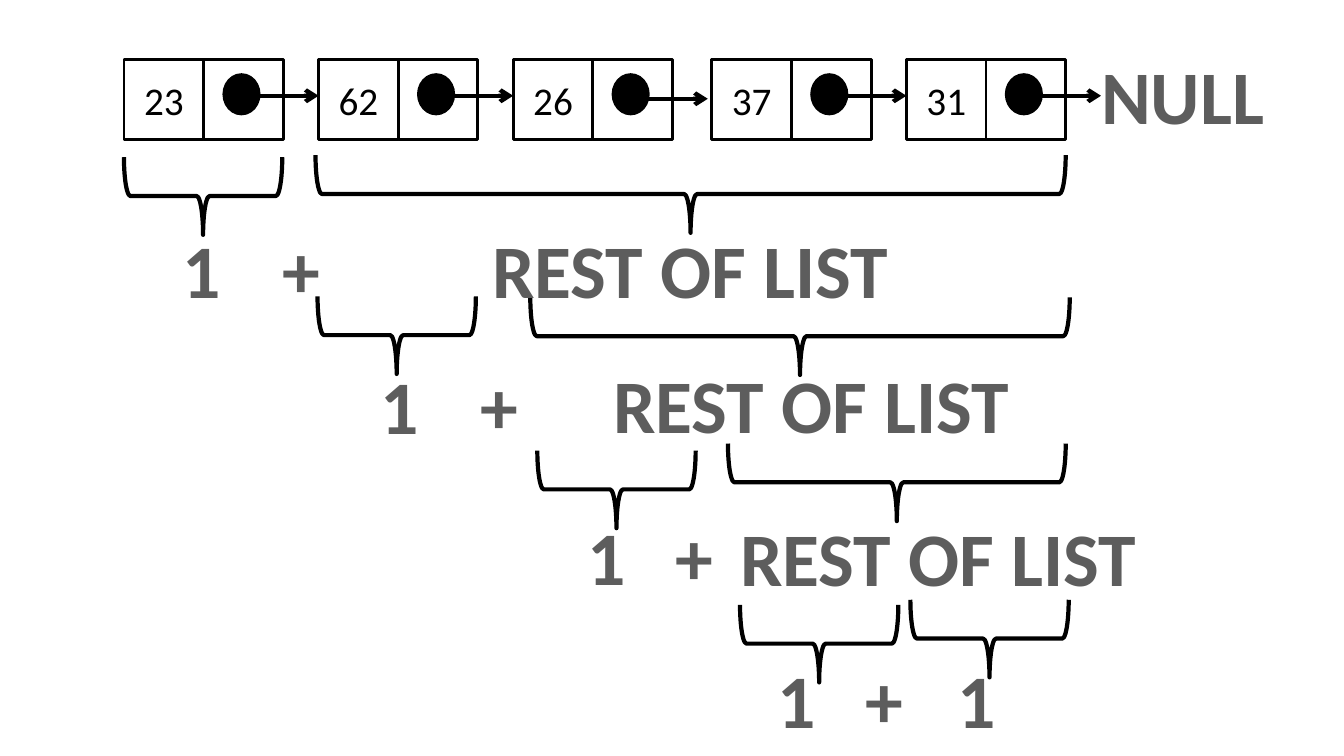
from typing import NamedTuple

import lxml.etree
import pptx
import pptx.dml.color
import pptx.enum.shapes
import pptx.enum.text
import pptx.oxml.ns
import pptx.util

Inches = pptx.util.Inches
Pt = pptx.util.Pt
SHAPE = pptx.enum.shapes.MSO_SHAPE

BLACK = "000000"
GREY = "5D5D5D"
FONT = "Calibri"
CELL = 0.79
NODE_TOP = 0.59
BRACE_HEIGHT = 0.77
ONE_NODE = 1.57
SYMBOL_WIDTH = 0.59
REST_WIDTH = 4.17


class Node(NamedTuple):
    value: str
    left: float
    arrow_y: float = 0.95


class Brace(NamedTuple):
    """Bounds as seen on the slide, with the tip pointing down."""
    left: float
    top: float
    width: float = ONE_NODE


class Label(NamedTuple):
    text: str
    left: float
    top: float
    width: float = SYMBOL_WIDTH


NODES = [
    Node("23", 1.23),
    Node("62", 3.16),
    Node("26", 5.09, 0.98),
    Node("37", 7.06),
    Node("31", 8.99),
]

BRACES = [
    Brace(1.23, 1.56), Brace(3.13, 1.54, 7.44),
    Brace(3.15, 2.94), Brace(5.26, 2.95, 5.35),
    Brace(5.33, 4.47), Brace(7.22, 4.4, 3.35),
    Brace(7.34, 6), Brace(9.03, 5.95),
]

LABELS = [
    Label("NULL", 10.81, 0.44, 1.84),
    Label("1", 1.7, 2.16), Label("+", 2.69, 2.16),
    Label("REST OF LIST", 4.76, 2.16, REST_WIDTH),
    Label("1", 3.67, 3.51), Label("+", 4.66, 3.51),
    Label("REST OF LIST", 5.96, 3.5, REST_WIDTH),
    Label("1", 5.72, 5.01), Label("+", 6.59, 5.01),
    Label("REST OF LIST", 7.22, 5.02, REST_WIDTH),
    Label("1", 7.61, 6.43), Label("+", 8.48, 6.43), Label("1", 9.39, 6.43),
]


def rgb(color: str) -> pptx.dml.color.RGBColor:
    return pptx.dml.color.RGBColor.from_string(color)


def write(frame, text: str, size: float, color: str, bold: bool = False) -> None:
    """Put one centred line of text into a text frame."""
    frame.text = text
    line = frame.paragraphs[0]
    line.alignment = pptx.enum.text.PP_ALIGN.CENTER
    font = line.runs[0].font
    font.name = FONT
    font.size = Pt(size)
    font.bold = bold
    font.color.rgb = rgb(color)


def add_outline(slide, kind, left: float, top: float, width: float,
                height: float, weight: float = 2):
    """Add an unfilled preset shape with a black line."""
    outline = slide.shapes.add_shape(
        kind, Inches(left), Inches(top), Inches(width), Inches(height))
    outline.shadow.inherit = False
    outline.fill.background()
    outline.line.color.rgb = rgb(BLACK)
    outline.line.width = Pt(weight)
    return outline


def add_arrow(slide, start: float, end: float, y: float) -> None:
    arrow = slide.shapes.add_connector(
        pptx.enum.shapes.MSO_CONNECTOR.STRAIGHT,
        Inches(start), Inches(y), Inches(end), Inches(y))
    arrow.line.color.rgb = rgb(BLACK)
    arrow.line.width = Pt(3)
    qn = pptx.oxml.ns.qn
    lxml.etree.SubElement(arrow.line._get_or_add_ln(), qn("a:tailEnd"), type="arrow")
    lxml.etree.SubElement(arrow._element.spPr, qn("a:effectLst"))


def add_node(slide, node: Node) -> None:
    """Draw a value cell, a pointer cell and the arrow to the next node."""
    value = add_outline(slide, SHAPE.RECTANGLE, node.left, NODE_TOP, CELL, CELL)
    value.text_frame.vertical_anchor = pptx.enum.text.MSO_ANCHOR.MIDDLE
    write(value.text_frame, node.value, 28, BLACK)
    dot = add_outline(slide, SHAPE.OVAL, node.left + 0.99, 0.74, 0.35, 0.39)
    dot.fill.solid()
    dot.fill.fore_color.rgb = rgb(BLACK)
    add_arrow(slide, node.left + 1.34, node.left + 1.93, node.arrow_y)
    add_outline(slide, SHAPE.RECTANGLE, node.left + CELL, NODE_TOP, CELL, CELL)


def add_brace(slide, brace: Brace) -> None:
    shift = (brace.width - BRACE_HEIGHT) / 2
    bracket = add_outline(slide, SHAPE.LEFT_BRACE, brace.left + shift,
                          brace.top - shift, BRACE_HEIGHT, brace.width, 3)
    bracket.rotation = 270


def add_label(slide, label: Label) -> None:
    box = slide.shapes.add_textbox(Inches(label.left), Inches(label.top),
                                   Inches(label.width), Inches(1.01))
    box.text_frame.word_wrap = False
    box.text_frame.auto_size = pptx.enum.text.MSO_AUTO_SIZE.SHAPE_TO_FIT_TEXT
    write(box.text_frame, label.text, 54, GREY, bold=True)


def main() -> None:
    deck = pptx.Presentation()
    deck.slide_width = Inches(13.33)
    deck.slide_height = Inches(7.5)
    slide = deck.slides.add_slide(deck.slide_layouts[6])
    for node in NODES:
        add_node(slide, node)
    for brace in BRACES:
        add_brace(slide, brace)
    for label in LABELS:
        add_label(slide, label)
    deck.save("out.pptx")


if __name__ == "__main__":
    main()
